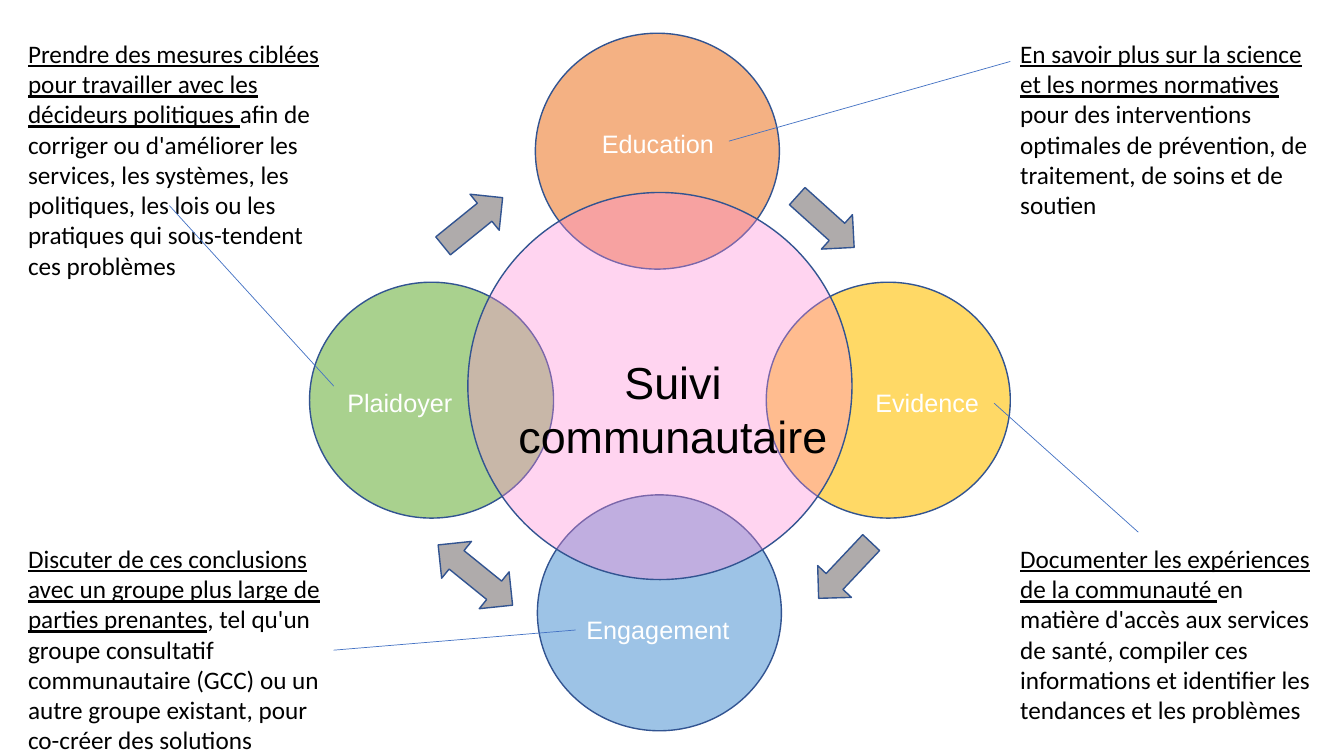
from lxml.etree import SubElement
from pptx import Presentation
from pptx.dml.color import RGBColor
from pptx.enum.shapes import MSO_CONNECTOR, MSO_SHAPE
from pptx.enum.text import MSO_ANCHOR, MSO_AUTO_SIZE, PP_ALIGN
from pptx.oxml.ns import qn
from pptx.util import Inches, Pt

HEX = {"orange": "F4B183", "blue": "9DC3E6", "yellow": "FFD966", "green": "A9D18E",
       "pink": "FF8AD8", "gray": "AFABAB", "edge": "325491", "link": "4472C4",
       "white": "FFFFFF", "black": "000000"}

TITLE = "Suivi communautaire"
DISC = (2.42, 2.34)
# label, fill, disc corner, label corner
THEMES = [
    ("Education", "orange", (5.31, 0.33), (5.45, 1.22)),
    ("Engagement", "blue", (5.33, 4.91), (5.45, 6.04)),
    ("Evidence", "yellow", (7.6, 2.8), (8.12, 3.79)),
    ("Plaidoyer", "green", (3.07, 2.8), (2.89, 3.79)),
]
# preset, box, rotation
ARROWS = [
    (MSO_SHAPE.DOWN_ARROW, (7.96, 1.82, 0.46, 0.76), 312),
    (MSO_SHAPE.DOWN_ARROW, (4.46, 1.82, 0.46, 0.76), 231),
    (MSO_SHAPE.DOWN_ARROW, (8.15, 5.28, 0.46, 0.76), 43.3),
    (MSO_SHAPE.UP_DOWN_ARROW, (4.48, 5.23, 0.47, 0.95), 309),
]
LEFT, RIGHT, TOP, LOW = 0.18, 10.02, 0.33, 5.34
# corner, height, underlined part, plain part
NOTES = [
    (RIGHT, TOP, 1.92, "En savoir plus sur la science et les normes normatives ",
     "pour des interventions optimales de prévention, de traitement, de soins et de soutien"),
    (RIGHT, LOW, 1.92, "Documenter les expériences de la communauté ",
     "en matière d'accès aux services de santé, compiler ces informations et identifier "
     "les tendances et les problèmes"),
    (LEFT, TOP, 2.52,
     "Prendre des mesures ciblées pour travailler avec les décideurs politiques ",
     "afin de corriger ou d'améliorer les services, les systèmes, les politiques, les lois "
     "ou les pratiques qui sous-tendent ces problèmes"),
    (LEFT, LOW, 2.22,
     "Discuter de ces conclusions avec un groupe plus large de parties prenantes",
     ", tel qu'un groupe consultatif communautaire (GCC) ou un autre groupe existant, "
     "pour co-créer des solutions"),
]
LINKS = [
    (7.23, 1.4, 10.02, 0.61),
    (9.86, 4, 11.29, 5.28),
    (1.68, 2.04, 3.31, 3.83),
    (3.31, 6.45, 5.71, 6.25),
]
LABEL = {"name": "Arial", "size": Pt(18)}
HEAD = {"name": "Arial", "size": Pt(32)}
NOTE = {"name": "Calibri", "size": Pt(18)}
FRAME = {"word_wrap": True, "auto_size": MSO_AUTO_SIZE.NONE,
         "vertical_anchor": MSO_ANCHOR.TOP}


def rgb(name):
    return RGBColor.from_string(HEX[name])


def put(obj, style):
    for key, val in style.items():
        setattr(obj, key, val)


def draw(slide, kind, box, fill, turn=0):
    shape = slide.shapes.add_shape(kind, *map(Inches, box))
    shape.shadow.inherit = False
    shape.rotation = turn
    shape.fill.solid()
    shape.fill.fore_color.rgb = rgb(fill)
    shape.line.color.rgb = rgb("edge")
    shape.line.width = Pt(1)
    return shape


def write(shape, runs, style, color, align):
    """Fill a shape with one paragraph of (text, underline) runs."""
    frame = shape.text_frame
    put(frame, FRAME)
    para = frame.paragraphs[0]
    para.alignment = align
    for text, under in runs:
        run = para.add_run()
        run.text = text
        put(run.font, style | {"underline": under})
        run.font.color.rgb = rgb(color)


def add_text(slide, box, *rest):
    write(slide.shapes.add_textbox(*map(Inches, box)), *rest)


def add_hub(slide):
    """Draw the clear centre disc with the slide title on top."""
    hub = draw(slide, MSO_SHAPE.OVAL, (4.64, 1.91, 3.81, 3.84), "pink")
    tint = hub.fill._xPr.find(".//" + qn("a:srgbClr"))
    SubElement(tint, qn("a:alpha"), val="36000")
    title = slide.shapes.title
    put(title, dict(zip(("left", "top", "width", "height"),
                        map(Inches, (5.04, 3.47, 3.27, 1.18)))))
    write(title, [(TITLE, False)], HEAD, "black", PP_ALIGN.CENTER)
    slide.shapes._spTree.append(title._element)


def add_link(slide, ends):
    link = slide.shapes.add_connector(MSO_CONNECTOR.STRAIGHT, *map(Inches, ends))
    link.line.color.rgb = rgb("link")
    link.line.width = Pt(0.5)
    SubElement(link._element.spPr, qn("a:effectLst"))


def main():
    deck = Presentation()
    deck.slide_width, deck.slide_height = Inches(13.33), Inches(7.5)
    slide = deck.slides.add_slide(deck.slide_layouts[5])
    for _, fill, spot, _ in THEMES:
        draw(slide, MSO_SHAPE.OVAL, spot + DISC, fill)
    for name, _, _, spot in THEMES:
        add_text(slide, spot + (2.15, 0.41), [(name, False)], LABEL, "white",
                 PP_ALIGN.CENTER)
    for kind, box, turn in ARROWS:
        draw(slide, kind, box, "gray", turn)
    add_hub(slide)
    for x, y, high, key, rest in NOTES:
        add_text(slide, (x, y, 3.14, high), [(key, True), (rest, False)], NOTE,
                 "black", PP_ALIGN.LEFT)
    for ends in LINKS:
        add_link(slide, ends)
    deck.save("out.pptx")


if __name__ == "__main__":
    main()
